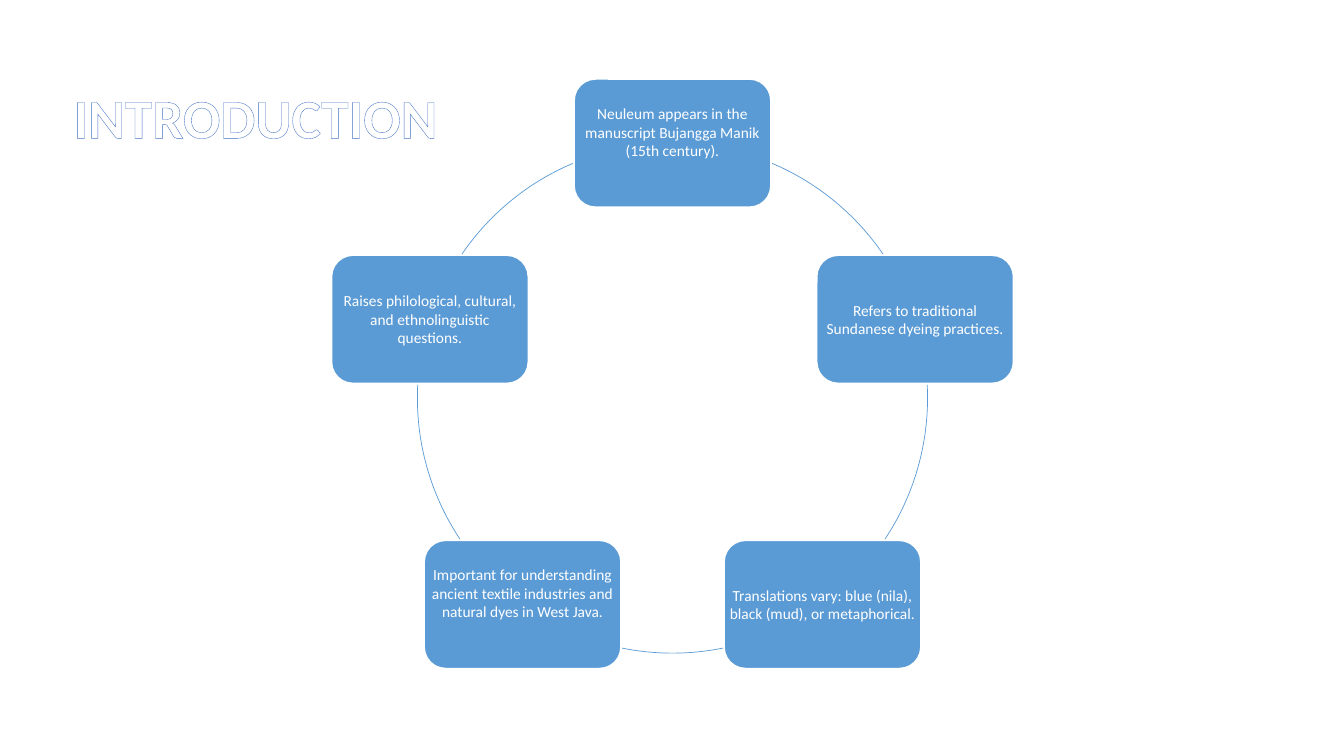
"""Build the introduction slide with its five-step cycle."""
import math

from lxml import etree
from pptx import Presentation
from pptx import util as u
from pptx.dml.color import RGBColor
from pptx.enum import shapes, text
from pptx.oxml import ns

WHITE = RGBColor(0xFF, 0xFF, 0xFF)
BLUE = RGBColor(0x5B, 0x9B, 0xD5)
OUTLINE = RGBColor(0x44, 0x72, 0xC4)
FONT = "Calibri"

CENTER_X, CENTER_Y, RADIUS = 6.67, 3.95, 2.53
BOX_WIDTH, BOX_HEIGHT = 1.95, 1.27
INSET, RAISED_INSET = 0.05, 0.27
ARC_UNITS_PER_DEGREE = 0.6

STEPS = [
    ("Neuleum appears in the manuscript Bujangga Manik (15th century).", RAISED_INSET),
    ("Refers to traditional Sundanese dyeing practices.", INSET),
    ("Translations vary: blue (nila), black (mud), or metaphorical.", INSET),
    ("Important for understanding ancient textile industries and natural dyes in West Java.",
     RAISED_INSET),
    ("Raises philological, cultural, and ethnolinguistic questions.", INSET),
]
ARC_ANGLES = [(293, 325.65), (357.02, 33.58), (78.56, 101.45),
              (146.42, 182.98), (214.35, 247)]


def apply_format(target, values):
    """Set each named attribute on the target."""
    for name, value in values.items():
        setattr(target, name, value)


def write_text(frame, wording, frame_format, para_format, font_format):
    """Put one formatted white paragraph into a text frame."""
    apply_format(frame, frame_format)
    para = frame.paragraphs[0]
    apply_format(para, para_format)
    span = para.add_run()
    span.text = wording
    apply_format(span.font, {"name": FONT, **font_format})
    span.font.color.rgb = WHITE
    return span


def outline_text(span, color, width):
    """Draw a line around the letters of a run."""
    line = etree.Element(ns.qn("a:ln"), w=str(u.Pt(width)))
    fill = etree.SubElement(line, ns.qn("a:solidFill"))
    etree.SubElement(fill, ns.qn("a:srgbClr"), val=str(color))
    span.font._element.insert(0, line)


def add_title(page, wording):
    """Fill the title placeholder with outlined letters."""
    title = page.shapes.title
    apply_format(title, {"left": u.Inches(0.63), "top": u.Inches(0.88),
                         "width": u.Inches(11.5), "height": u.Inches(0.63)})
    span = write_text(
        title.text_frame, wording,
        {"vertical_anchor": text.MSO_ANCHOR.MIDDLE, "word_wrap": True,
         "auto_size": text.MSO_AUTO_SIZE.NONE},
        {"alignment": text.PP_ALIGN.LEFT, "line_spacing": 0.9},
        {"size": u.Pt(39.6), "bold": True})
    outline_text(span, OUTLINE, 0.8)


def add_step(cycle, index, wording, bottom_inset):
    """Place a rounded box and its label on the circle."""
    angle = math.radians(72 * index - 90)
    left = CENTER_X + RADIUS * math.cos(angle) - BOX_WIDTH / 2
    top = CENTER_Y + RADIUS * math.sin(angle) - BOX_HEIGHT / 2
    place = [u.Inches(length) for length in (left, top, BOX_WIDTH, BOX_HEIGHT)]
    box = cycle.shapes.add_shape(shapes.MSO_SHAPE.ROUNDED_RECTANGLE, *place)
    box.shadow.inherit = False
    box.fill.solid()
    box.fill.fore_color.rgb = BLUE
    box.line.color.rgb = WHITE
    box.line.width = u.Pt(1)
    label = cycle.shapes.add_textbox(*place)
    write_text(
        label.text_frame, wording,
        {"word_wrap": True, "vertical_anchor": text.MSO_ANCHOR.MIDDLE,
         "margin_left": u.Inches(INSET), "margin_right": u.Inches(INSET),
         "margin_top": u.Inches(INSET), "margin_bottom": u.Inches(bottom_inset)},
        {"alignment": text.PP_ALIGN.CENTER}, {"size": u.Pt(11)})


def add_arc(cycle, angles):
    """Draw a part of the circle between two angles."""
    arc = cycle.shapes.add_shape(
        shapes.MSO_SHAPE.ARC, u.Inches(CENTER_X - RADIUS), u.Inches(CENTER_Y - RADIUS),
        u.Inches(2 * RADIUS), u.Inches(2 * RADIUS))
    for position, angle in enumerate(angles):
        arc.adjustments[position] = angle * ARC_UNITS_PER_DEGREE
    arc.shadow.inherit = False
    arc.fill.background()
    arc.line.color.rgb = BLUE
    arc.line.width = u.Pt(0.5)


def main():
    """Create the deck and save it."""
    deck = Presentation()
    deck.slide_width, deck.slide_height = u.Inches(13.33), u.Inches(7.5)
    page = deck.slides.add_slide(deck.slide_layouts[5])
    add_title(page, "INTRODUCTION")
    cycle = page.shapes.add_group_shape()
    for index, ((wording, bottom_inset), angles) in enumerate(zip(STEPS, ARC_ANGLES)):
        add_step(cycle, index, wording, bottom_inset)
        add_arc(cycle, angles)
    deck.save("out.pptx")


if __name__ == "__main__":
    main()
